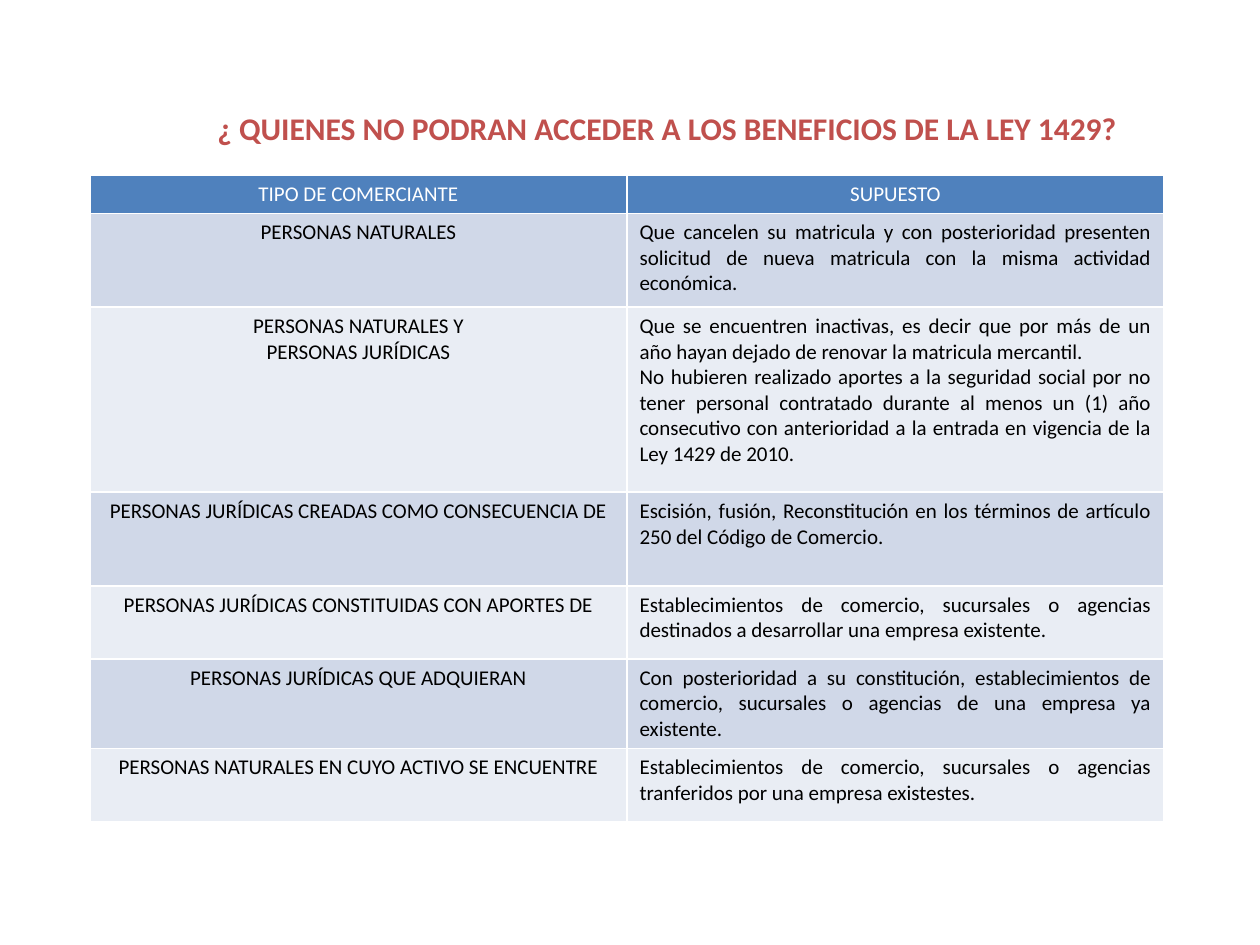
from dataclasses import dataclass

from lxml import etree
from pptx import Presentation
from pptx.dml.color import RGBColor
from pptx.enum.text import MSO_AUTO_SIZE, PP_ALIGN
from pptx.oxml.ns import qn
from pptx.util import Emu, Pt

LEFT, MID, JUST = PP_ALIGN.LEFT, PP_ALIGN.CENTER, PP_ALIGN.JUSTIFY
GROW = MSO_AUTO_SIZE.SHAPE_TO_FIT_TEXT
SCALE = 914400 / 126
FONT = "Calibri"
COLORS = {
    "title": "C0504D",
    "head": "4F81BD",
    "dark": "D0D8E8",
    "light": "E9EDF4",
    "white": "FFFFFF",
    "black": "000000",
}


@dataclass
class Row:
    high: int
    kind: list[str]
    case: list[str]


ROWS = [
    Row(38, ["TIPO DE COMERCIANTE"], ["SUPUESTO"]),
    Row(94, ["PERSONAS NATURALES"], [
        "Que cancelen su matricula y con posterioridad presenten solicitud "
        "de nueva matricula con la misma actividad económica."]),
    Row(185, ["PERSONAS NATURALES Y", "PERSONAS JURÍDICAS"], [
        "Que se encuentren inactivas, es decir que por más de un año hayan "
        "dejado de renovar la matricula mercantil.",
        "No hubieren realizado aportes a la seguridad social por no tener "
        "personal contratado durante al menos un (1) año consecutivo con "
        "anterioridad a la entrada en vigencia de la Ley 1429 de 2010."]),
    Row(94, ["PERSONAS JURÍDICAS CREADAS COMO CONSECUENCIA DE"], [
        "Escisión, fusión, Reconstitución en los términos de artículo 250 "
        "del Código de Comercio."]),
    Row(73, ["PERSONAS JURÍDICAS CONSTITUIDAS CON APORTES DE"], [
        "Establecimientos de comercio, sucursales o agencias destinados a "
        "desarrollar una empresa existente."]),
    Row(88, ["PERSONAS JURÍDICAS QUE ADQUIERAN"], [
        "Con posterioridad a su constitución, establecimientos de comercio, "
        "sucursales o agencias de una empresa ya existente."]),
    Row(73, ["PERSONAS NATURALES EN CUYO ACTIVO SE ENCUENTRE"], [
        "Establecimientos de comercio, sucursales o agencias tranferidos por "
        "una empresa existestes."]),
]


def px(num: int) -> Emu:
    return Emu(round(num * SCALE))


def tint(name: str) -> RGBColor:
    return RGBColor.from_string(COLORS[name])


def write(frame, lines: list[str], *, size: int = 12, color: str = "black",
          bold: bool = False, align=LEFT) -> None:
    frame.word_wrap = True
    for i, line in enumerate(lines):
        para = frame.paragraphs[0] if i == 0 else frame.add_paragraph()
        para.alignment = align
        run = para.add_run()
        run.text = line
        run.font.name = FONT
        run.font.size = Pt(size)
        run.font.bold = bold
        run.font.color.rgb = tint(color)


def edge(cell) -> None:
    props = cell._tc.get_or_add_tcPr()
    for i, side in enumerate(("lnL", "lnR", "lnT", "lnB")):
        line = etree.Element(qn(f"a:{side}"), w=str(Pt(1)))
        fill = etree.SubElement(line, qn("a:solidFill"))
        etree.SubElement(fill, qn("a:srgbClr"), val=COLORS["white"])
        props.insert(i, line)


def grid(slide, x: int, y: int, wide: int, rows: list[Row]) -> None:
    high = sum(row.high for row in rows)
    table = slide.shapes.add_table(
        len(rows), 2, px(x), px(y), px(wide), px(high)).table
    for col in table.columns:
        col.width = px(wide // 2)
    for i, row in enumerate(rows):
        table.rows[i].height = px(row.high)
        back = "head" if i == 0 else ("light", "dark")[i % 2]
        ink = "white" if i == 0 else "black"
        aligns = (MID, MID if i == 0 else JUST)
        for j, lines in enumerate((row.kind, row.case)):
            cell = table.cell(i, j)
            cell.fill.solid()
            cell.fill.fore_color.rgb = tint(back)
            edge(cell)
            write(cell.text_frame, lines, color=ink, align=aligns[j])


def main() -> None:
    deck = Presentation()
    deck.slide_width, deck.slide_height = px(1260), px(945)
    slide = deck.slides.add_slide(deck.slide_layouts[6])
    grid(slide, 90, 175, 1074, ROWS)
    title = slide.shapes.add_textbox(px(205), px(103), px(958), px(50))
    write(title.text_frame,
          ["¿ QUIENES NO PODRAN ACCEDER A LOS BENEFICIOS DE LA LEY 1429?"],
          size=18, color="title", bold=True)
    title.text_frame.auto_size = GROW
    deck.save("out.pptx")


if __name__ == "__main__":
    main()
